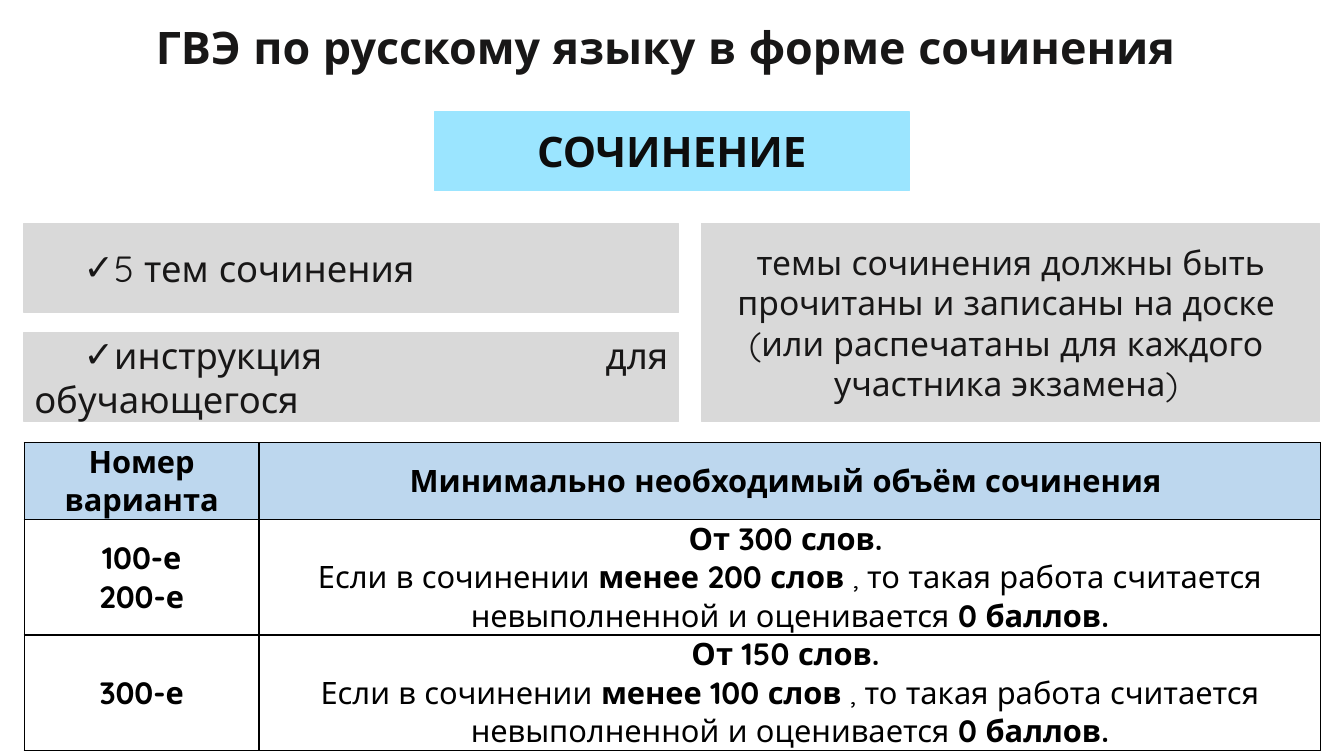
from dataclasses import dataclass

from lxml.etree import SubElement
from pptx import Presentation
from pptx.dml.color import RGBColor
from pptx.enum.shapes import MSO_SHAPE as Shape
from pptx.enum.text import MSO_ANCHOR as Anchor, MSO_AUTO_SIZE as AutoSize, PP_ALIGN as Align
from pptx.oxml.ns import qn
from pptx.util import Inches, Pt


@dataclass(frozen=True)
class Theme:
    font: str = "Quicksand"
    ink: str = "181717"
    banner_ink: str = "0D0D0D"
    black: str = "000000"
    banner: str = "9BE5FF"
    panel: str = "D9D9D9"
    header: str = "BDD7EE"
    title_size: int = 32
    banner_size: int = 30
    list_size: int = 26
    note_size: int = 24
    table_size: int = 22


THEME = Theme()
WIDTH, HEIGHT = Inches(13.33), Inches(7.5)

# Positions are percentages of the slide's width and height
MARGIN = 1.8
PANEL_TOP, PANEL_HEIGHT, PANEL_STEP = 29.6, 11.73, 14.4
COLUMN_WIDTHS = (17.48, 78.99)
ROW_HEIGHTS = (9.73, 14.93, 14.93)


def across(share):
    return round(WIDTH * share / 100)


def down(share):
    return round(HEIGHT * share / 100)


def area(left, top, width, height):
    return across(left), down(top), across(width), down(height)


def move(box, place):
    box.left, box.top, box.width, box.height = place


def paint(box, color):
    box.fill.solid()
    box.fill.fore_color.rgb = RGBColor.from_string(color)
    box.line.color.rgb = RGBColor.from_string(color)
    box.line.width = Pt(1)


def style_span(span, size, color, bold):
    span.font.name = THEME.font
    span.font.size = Pt(size)
    span.font.bold = bold
    span.font.color.rgb = RGBColor.from_string(color)


def write(frame, text, size, color, bold=False, align=Align.CENTER, anchor=Anchor.MIDDLE):
    frame.text = text
    frame.word_wrap = True
    frame.auto_size = AutoSize.NONE
    frame.vertical_anchor = anchor
    for para in frame.paragraphs:
        para.alignment = align
        for span in para.runs:
            style_span(span, size, color, bold)


def add_panel(page, place, color, text, size, ink, bold=False):
    box = page.shapes.add_shape(Shape.RECTANGLE, *place)
    box.shadow.inherit = False
    paint(box, color)
    write(box.text_frame, text, size, ink, bold)


def fill_check_item(box, place, text):
    move(box, place)
    paint(box, THEME.panel)
    write(box.text_frame, text, THEME.list_size, THEME.ink, align=Align.JUSTIFY)
    para = box.text_frame.paragraphs[0]
    para.space_before, para.space_after = Pt(0), Pt(9.9)
    props = para._p.get_or_add_pPr()
    props.set("marL", "0")
    props.set("indent", str(Inches(0.49)))
    SubElement(props, qn("a:buChar"), char="✓")
    tabs = SubElement(props, qn("a:tabLst"))
    SubElement(tabs, qn("a:tab"), pos=str(Inches(0.82)), algn="l")


def add_borders(cell):
    props = cell._tc.get_or_add_tcPr()
    for index, side in enumerate(("a:lnL", "a:lnR", "a:lnT", "a:lnB")):
        line = props.makeelement(qn(side), {"w": str(Pt(1))})
        fill = SubElement(line, qn("a:solidFill"))
        SubElement(fill, qn("a:srgbClr"), val=THEME.black)
        props.insert(index, line)


def fill_cell(cell, paragraphs, is_header):
    """Each paragraph is a list of (text, bold) spans."""
    cell.margin_left = cell.margin_right = Inches(0.07)
    cell.margin_top = cell.margin_bottom = 0
    cell.vertical_anchor = Anchor.MIDDLE
    if is_header:
        cell.fill.solid()
        cell.fill.fore_color.rgb = RGBColor.from_string(THEME.header)
    else:
        cell.fill.background()
    add_borders(cell)
    frame = cell.text_frame
    for index, spans in enumerate(paragraphs):
        para = frame.add_paragraph() if index else frame.paragraphs[0]
        para.alignment = Align.CENTER
        for text, bold in spans:
            span = para.add_run()
            span.text = text
            style_span(span, THEME.table_size, THEME.black, bold)


def bold_lines(*lines):
    return [[(line, True)] for line in lines]


def volume_rule(required, minimum):
    return bold_lines(f"От {required} слов. ") + [[
        ("Если в сочинении ", False),
        (f"менее {minimum} слов", True),
        (" , то такая работа считается невыполненной и оценивается ", False),
        ("0 баллов.", True),
    ]]


def add_volume_table(page, rows):
    place = area(MARGIN, 58.53, sum(COLUMN_WIDTHS), sum(ROW_HEIGHTS))
    table = page.shapes.add_table(len(rows), len(COLUMN_WIDTHS), *place).table
    table.first_row = table.horz_banding = False
    for column, share in zip(table.columns, COLUMN_WIDTHS):
        column.width = across(share)
    for row, share in zip(table.rows, ROW_HEIGHTS):
        row.height = down(share)
    for r, contents in enumerate(rows):
        for c, paragraphs in enumerate(contents):
            fill_cell(table.cell(r, c), paragraphs, is_header=r == 0)
    table.cell(0, 0).vertical_anchor = Anchor.TOP


def main():
    deck = Presentation()
    deck.slide_width, deck.slide_height = WIDTH, HEIGHT
    page = deck.slides.add_slide(deck.slide_layouts[3])
    title, *items = page.placeholders

    # Heading and banner
    move(title, area(4.65, 2, 90.7, 8.53))
    write(title.text_frame, "ГВЭ по русскому языку в форме сочинения ",
          THEME.title_size, THEME.ink, bold=True, anchor=Anchor.TOP)
    add_panel(page, area(32.33, 14.8, 35.33, 10.4), THEME.banner, "СОЧИНЕНИЕ",
              THEME.banner_size, THEME.banner_ink, bold=True)

    # Check list on the left
    texts = ("5 тем сочинения", "инструкция для обучающегося")
    for index, (text, box) in enumerate(zip(texts, items)):
        top = PANEL_TOP + index * PANEL_STEP
        fill_check_item(box, area(MARGIN, top, 48.69, PANEL_HEIGHT), text)
    for spare in items[len(texts):]:
        spare.element.getparent().remove(spare.element)

    # Note on the right
    add_panel(page, area(52.21, PANEL_TOP, 45.99, PANEL_STEP + PANEL_HEIGHT), THEME.panel,
              "темы сочинения должны быть прочитаны и записаны на доске \n"
              "(или распечатаны для каждого \nучастника экзамена) ",
              THEME.note_size, THEME.ink)

    # Required volume by variant
    add_volume_table(page, [
        (bold_lines("Номер варианта"), bold_lines("Минимально необходимый объём сочинения ")),
        (bold_lines("100-е", "200-е"), volume_rule(300, 200)),
        (bold_lines("300-е"), volume_rule(150, 100)),
    ])
    deck.save("out.pptx")


if __name__ == "__main__":
    main()
